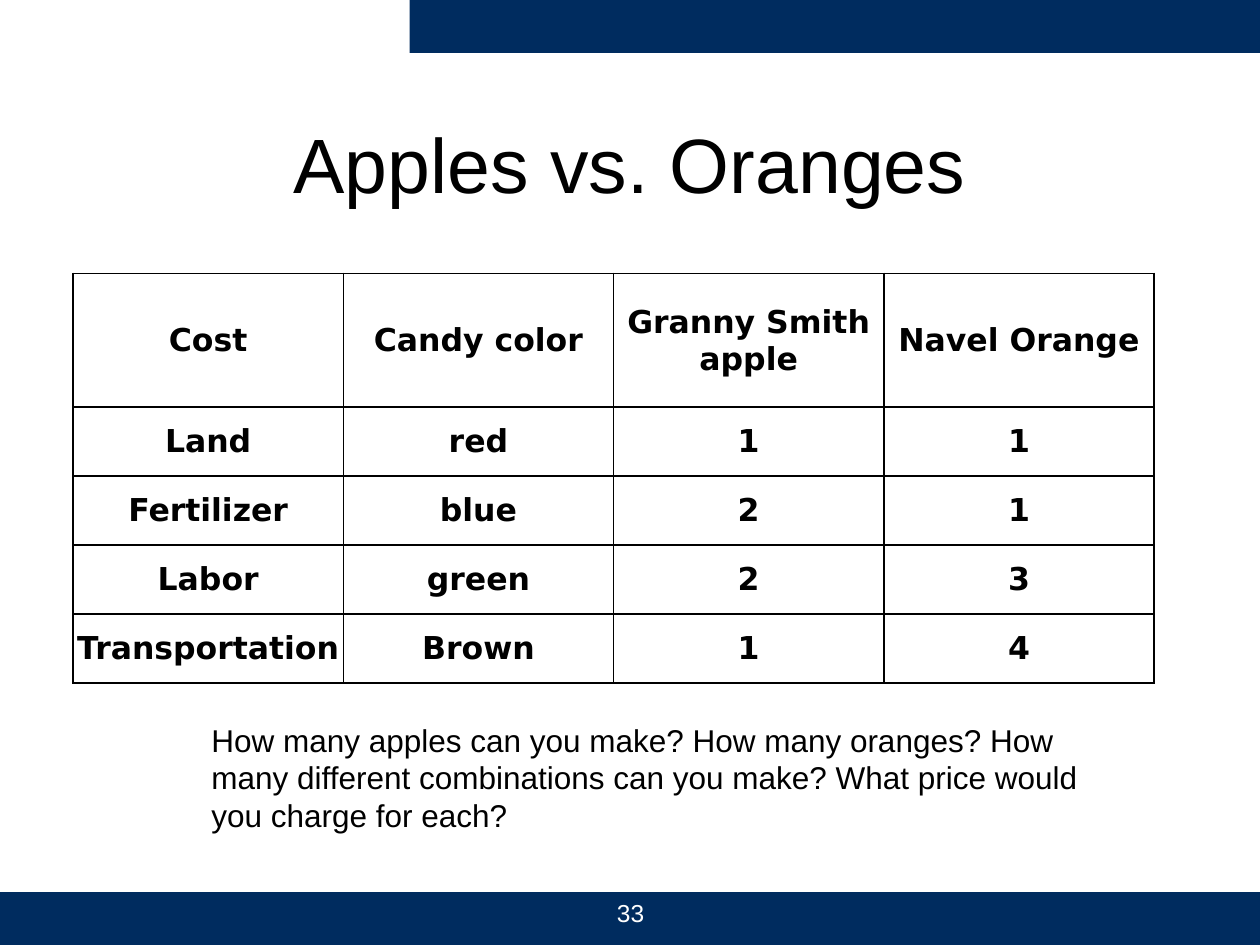
from lxml import etree
from pptx import Presentation
from pptx.dml.color import RGBColor
from pptx.enum.shapes import MSO_SHAPE
from pptx.enum.text import MSO_ANCHOR, PP_ALIGN
from pptx.oxml.ns import qn
from pptx.util import Inches, Pt

RECT = MSO_SHAPE.RECTANGLE
MIDDLE, TOP = MSO_ANCHOR.MIDDLE, MSO_ANCHOR.TOP
CENTER, LEFT = PP_ALIGN.CENTER, PP_ALIGN.LEFT
COLORS = {"navy": "002C5F", "ink": "000000", "paper": "FFFFFF"}
ROWS = [
    ["Cost", "Candy color", "Granny Smith apple", "Navel Orange"],
    ["Land", "red", "1", "1"],
    ["Fertilizer", "blue", "2", "1"],
    ["Labor", "green", "2", "3"],
    ["Transportation", "Brown", "1", "4"],
]


def color(name):
    return RGBColor.from_string(COLORS[name])


def write(frame, text, size, align=LEFT, face="Arial", tone="ink", bold=False):
    frame.text = text
    line = frame.paragraphs[0]
    line.alignment = align
    font = line.runs[0].font
    font.name, font.size, font.bold = face, Pt(size), bold
    font.color.rgb = color(tone)


def add_band(slide, box):
    band = slide.shapes.add_shape(RECT, *map(Inches, box))
    band.shadow.inherit = False
    band.fill.solid()
    band.fill.fore_color.rgb = color("navy")
    band.line.fill.background()


def add_title(slide, box, text):
    title = slide.shapes.title
    title.left, title.top, title.width, title.height = map(Inches, box)
    title.text_frame.vertical_anchor = MIDDLE
    write(title.text_frame, text, 44, CENTER)


def add_text(slide, box, text, size, align=LEFT, tone="ink"):
    frame = slide.shapes.add_textbox(*map(Inches, box)).text_frame
    frame.word_wrap = True
    frame.vertical_anchor = TOP
    write(frame, text, size, align, tone=tone)


def add_edges(cell):
    props = cell._tc.get_or_add_tcPr()
    for side in ("lnL", "lnR", "lnT", "lnB"):
        edge = etree.SubElement(props, qn(f"a:{side}"), w=str(Pt(1)))
        fill = etree.SubElement(edge, qn("a:solidFill"))
        etree.SubElement(fill, qn("a:srgbClr"), val=COLORS["ink"])


def add_costs(slide, box, rows, head):
    left, top, width, height = box
    table = slide.shapes.add_table(len(rows), len(rows[0]), *map(Inches, box)).table
    for col in table.columns:
        col.width = Inches(width / len(rows[0]))
    for i, row in enumerate(table.rows):
        row.height = Inches((height - head) / (len(rows) - 1) if i else head)
        for cell, text in zip(row.cells, rows[i]):
            cell.margin_left = cell.margin_right = cell.margin_top = Inches(0.01)
            cell.margin_bottom = 0
            cell.vertical_anchor = MIDDLE
            add_edges(cell)
            cell.fill.background()
            write(cell.text_frame, text, 18, CENTER, "DejaVu Sans", bold=True)


def main():
    deck = Presentation()
    deck.slide_width, deck.slide_height = Inches(10), Inches(7.5)
    slide = deck.slides.add_slide(deck.slide_layouts[5])
    add_band(slide, (3.25, 0, 6.75, 0.42))
    add_band(slide, (0, 7.08, 10, 0.42))
    add_title(slide, (0.75, 0.67, 8.5, 1.25), "Apples vs. Oranges")
    add_costs(slide, (0.58, 2.17, 8.58, 3.25), ROWS, 1.06)
    add_text(slide, (4.42, 7.08, 1.17, 0.33), "33", 14, CENTER, "paper")
    add_text(
        slide, (1.58, 5.67, 7.33, 1.01),
        "How many apples can you make? How many oranges? How many different "
        "combinations can you make? What price would you charge for each?", 18)
    deck.save("out.pptx")


if __name__ == "__main__":
    main()
